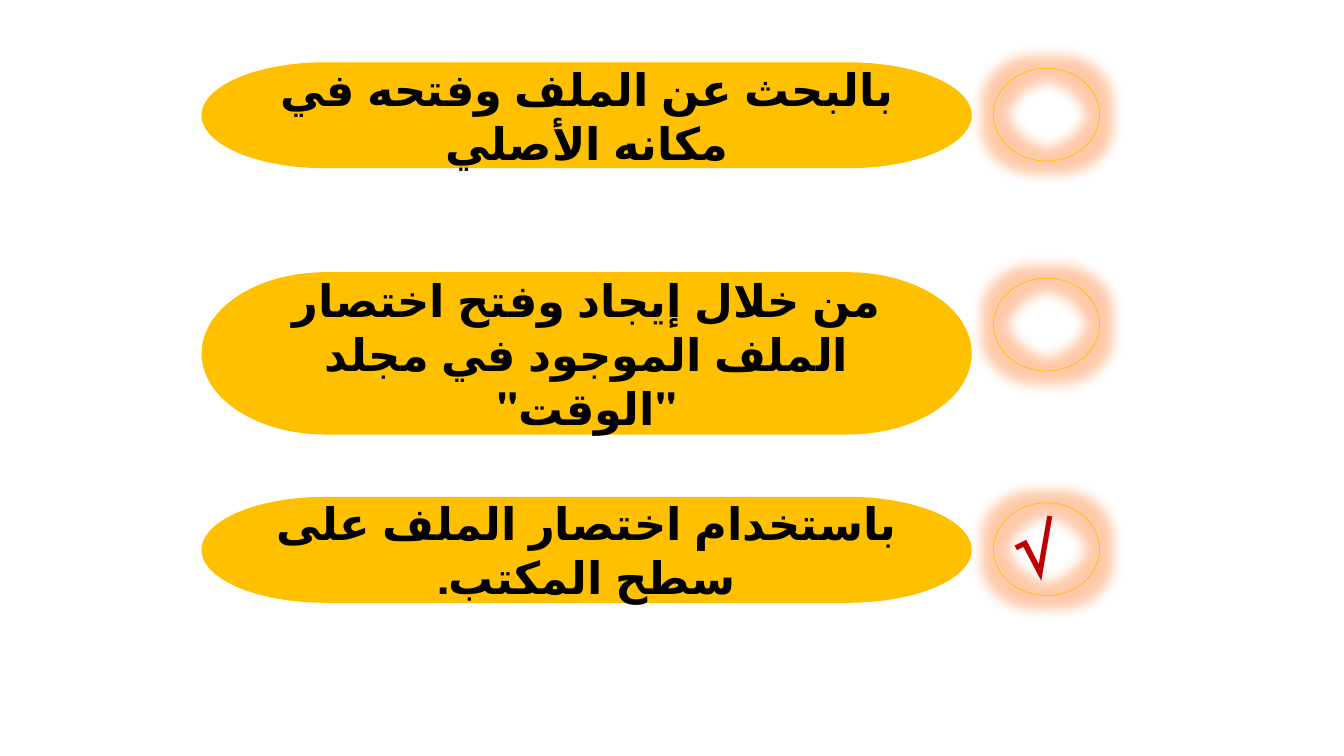
from lxml import etree
from pptx import Presentation
from pptx.dml.color import RGBColor
from pptx.enum import lang, shapes, text
from pptx.oxml import ns
from pptx.util import Cm, Pt

GOLD, BLACK, RED, GLOW = "FFC000", "000000", "C00000", "FF7A28"
FONT = "Calibri"

ANSWERS_LEFT = 5.08
ANSWERS_WIDTH = 22.63
MARK_WIDTH, MARK_HEIGHT = 2.67, 2.34

# Answer, top and height in cm, whether it is the right one
ANSWERS = [
    ("بالبحث عن الملف وفتحه في مكانه الأصلي", 1.57, 2.67, False),
    ('من خلال إيجاد وفتح اختصار الملف الموجود في مجلد "الوقت"', 6.86, 4.09, False),
    ("باستخدام اختصار الملف على سطح المكتب.", 12.52, 2.67, True),
]


def colour(value):
    return RGBColor.from_string(value)


def add_arabic(frame, words, size, ink, align):
    """Write one bold right-to-left run in the frame's first paragraph."""
    frame.word_wrap = True
    paragraph = frame.paragraphs[0]
    paragraph.alignment = align
    paragraph._p.get_or_add_pPr().set("rtl", "1")
    run = paragraph.add_run()
    run.text = words
    run.font.size = Pt(size)
    run.font.bold = True
    run.font.name = FONT
    run.font.language_id = lang.MSO_LANGUAGE_ID.ARABIC
    run.font.color.rgb = colour(ink)


def add_glow(circle, radius, ink, opacity):
    effects = circle._element.spPr.find(ns.qn("a:effectLst"))
    glow = etree.SubElement(effects, ns.qn("a:glow"), rad=str(Pt(radius)))
    tint = etree.SubElement(glow, ns.qn("a:srgbClr"), val=ink)
    etree.SubElement(tint, ns.qn("a:alpha"), val=str(opacity * 1000))


def add_tick(slide, left, top):
    tick = slide.shapes.add_textbox(Cm(left), Cm(top), Cm(0.91), Cm(2.31))
    tick.text_frame.auto_size = text.MSO_AUTO_SIZE.SHAPE_TO_FIT_TEXT
    add_arabic(tick.text_frame, "√ ", 48, RED, text.PP_ALIGN.RIGHT)


def add_answer(slide, words, left, top, width, height, is_right):
    group = slide.shapes.add_group_shape()
    mark_left = left + width - MARK_WIDTH
    mark_top = top + 0.15

    # Glowing circle for the mark
    mark = group.shapes.add_shape(
        shapes.MSO_SHAPE.OVAL,
        Cm(mark_left), Cm(mark_top), Cm(MARK_WIDTH), Cm(MARK_HEIGHT))
    mark.fill.background()
    mark.line.color.rgb = colour(GOLD)
    mark.line.width = Pt(0.5)
    mark.shadow.inherit = False
    add_glow(mark, 18, GLOW, 40)

    # Pill with the answer
    pill = group.shapes.add_shape(
        shapes.MSO_SHAPE.FLOWCHART_TERMINATOR,
        Cm(left), Cm(top), Cm(width - MARK_WIDTH - 0.55), Cm(height))
    pill.fill.solid()
    pill.fill.fore_color.rgb = colour(GOLD)
    pill.line.fill.background()
    pill.shadow.inherit = False
    pill.text_frame.vertical_anchor = text.MSO_ANCHOR.MIDDLE
    add_arabic(pill.text_frame, words, 32, BLACK, text.PP_ALIGN.CENTER)

    if is_right:
        add_tick(slide, mark_left + 0.87, mark_top + 0.03)


def main():
    deck = Presentation()
    deck.slide_width, deck.slide_height = Cm(33.87), Cm(19.05)
    slide = deck.slides.add_slide(deck.slide_layouts[6])
    for words, top, height, is_right in ANSWERS:
        add_answer(slide, words, ANSWERS_LEFT, top, ANSWERS_WIDTH, height, is_right)
    deck.save("out.pptx")


if __name__ == "__main__":
    main()
